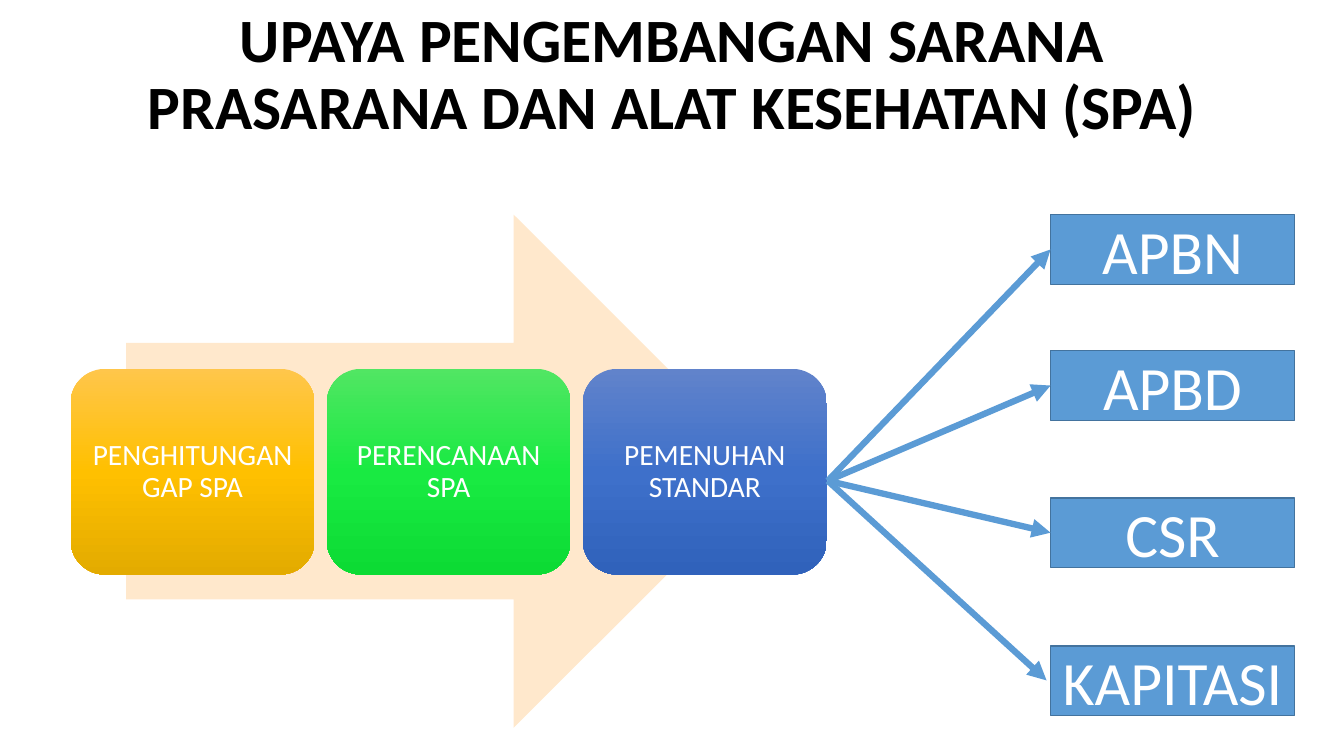
"""Build the slide on developing health facilities, infrastructure and equipment."""
from copy import deepcopy

from pptx import Presentation
from pptx.dml.color import RGBColor
from pptx.enum.shapes import MSO_CONNECTOR as Connector, MSO_SHAPE as Shape
from pptx.enum.text import MSO_ANCHOR as Anchor, PP_ALIGN as Align
from pptx.oxml.ns import qn
from pptx.oxml.xmlchemy import OxmlElement
from pptx.util import Inches, Pt

COLORS = {
    "black": "000000",
    "white": "FFFFFF",
    "arrow": "FFE8CC",
    "source": "5B9BD5",
    "source_edge": "43739E",
}
STEPS = [
    ("PENGHITUNGAN GAP SPA", ["FFC64B", "FFC000", "E3AB00"]),
    ("PERENCANAAN SPA", ["51E663", "19EA42", "0CDB34"]),
    ("PEMENUHAN STANDAR", ["6183CB", "3E70CA", "3062BB"]),
]
SOURCES = [("APBN", 2.13), ("APBD", 3.48), ("CSR", 4.94), ("KAPITASI", 6.41)]


def write_text(shape, text, size, color, spacing=1.0, bold=False):
    frame = shape.text_frame
    frame.word_wrap = True
    frame.vertical_anchor = Anchor.MIDDLE
    paragraph = frame.paragraphs[0]
    paragraph.alignment = Align.CENTER
    paragraph.line_spacing = spacing
    run = paragraph.add_run()
    run.text = text
    for name, value in {"name": "Calibri", "size": Pt(size), "bold": bold}.items():
        setattr(run.font, name, value)
    run.font.color.rgb = RGBColor.from_string(COLORS[color])


def add_box(kind, left, top, width, height):
    shape = slide.shapes.add_shape(
        kind, Inches(left), Inches(top), Inches(width), Inches(height))
    shape.shadow.inherit = False
    shape.line.fill.background()
    return shape


presentation = Presentation()
presentation.slide_width = Inches(13.33)
presentation.slide_height = Inches(7.5)
slide = presentation.slides.add_slide(presentation.slide_layouts[6])

title = slide.shapes.add_textbox(Inches(0.92), Inches(0.03), Inches(11.5), Inches(1.45))
write_text(title, "UPAYA PENGEMBANGAN SARANA PRASARANA DAN ALAT KESEHATAN (SPA)",
           44, "black", spacing=0.9, bold=True)

arrow = add_box(Shape.RIGHT_ARROW, 1.25, 2.13, 6.39, 5.09)
arrow.fill.solid()
arrow.fill.fore_color.rgb = RGBColor.from_string(COLORS["arrow"])

for index, (label, shades) in enumerate(STEPS):
    step = add_box(Shape.ROUNDED_RECTANGLE, 0.7 + 2.54 * index, 3.66, 2.42, 2.04)
    step.fill.gradient()
    step.fill.gradient_angle = 270
    stop_list = next(step.element.iter(qn("a:gsLst")))
    stop_list.append(deepcopy(stop_list[0]))
    for stop, position, shade in zip(step.fill.gradient_stops, (0, 0.5, 1), shades):
        stop.position = position
        stop.color.rgb = RGBColor.from_string(shade)
    for side in ("left", "right", "top", "bottom"):
        setattr(step.text_frame, f"margin_{side}", Inches(0.09))
    write_text(step, label, 21, "white", spacing=0.9)

source_boxes = []
for label, top in SOURCES:
    source = add_box(Shape.RECTANGLE, 10.42, top, 2.42, 0.69)
    source.fill.solid()
    source.fill.fore_color.rgb = RGBColor.from_string(COLORS["source"])
    source.line.color.rgb = RGBColor.from_string(COLORS["source_edge"])
    source.line.width = Pt(1)
    write_text(source, label, 44, "white")
    source_boxes.append(source)

for source in source_boxes:
    connector = slide.shapes.add_connector(
        Connector.STRAIGHT, Inches(8.21), Inches(4.77), Inches(10.38), Inches(6.75))
    if source is not source_boxes[-1]:
        connector.end_connect(source, 1)
    connector.line.color.rgb = RGBColor.from_string(COLORS["source"])
    connector.line.width = Pt(4.5)
    arrowhead = OxmlElement("a:tailEnd")
    arrowhead.set("type", "triangle")
    connector.element.spPr.find(qn("a:ln")).append(arrowhead)
    connector.element.spPr.append(OxmlElement("a:effectLst"))

presentation.save("out.pptx")
